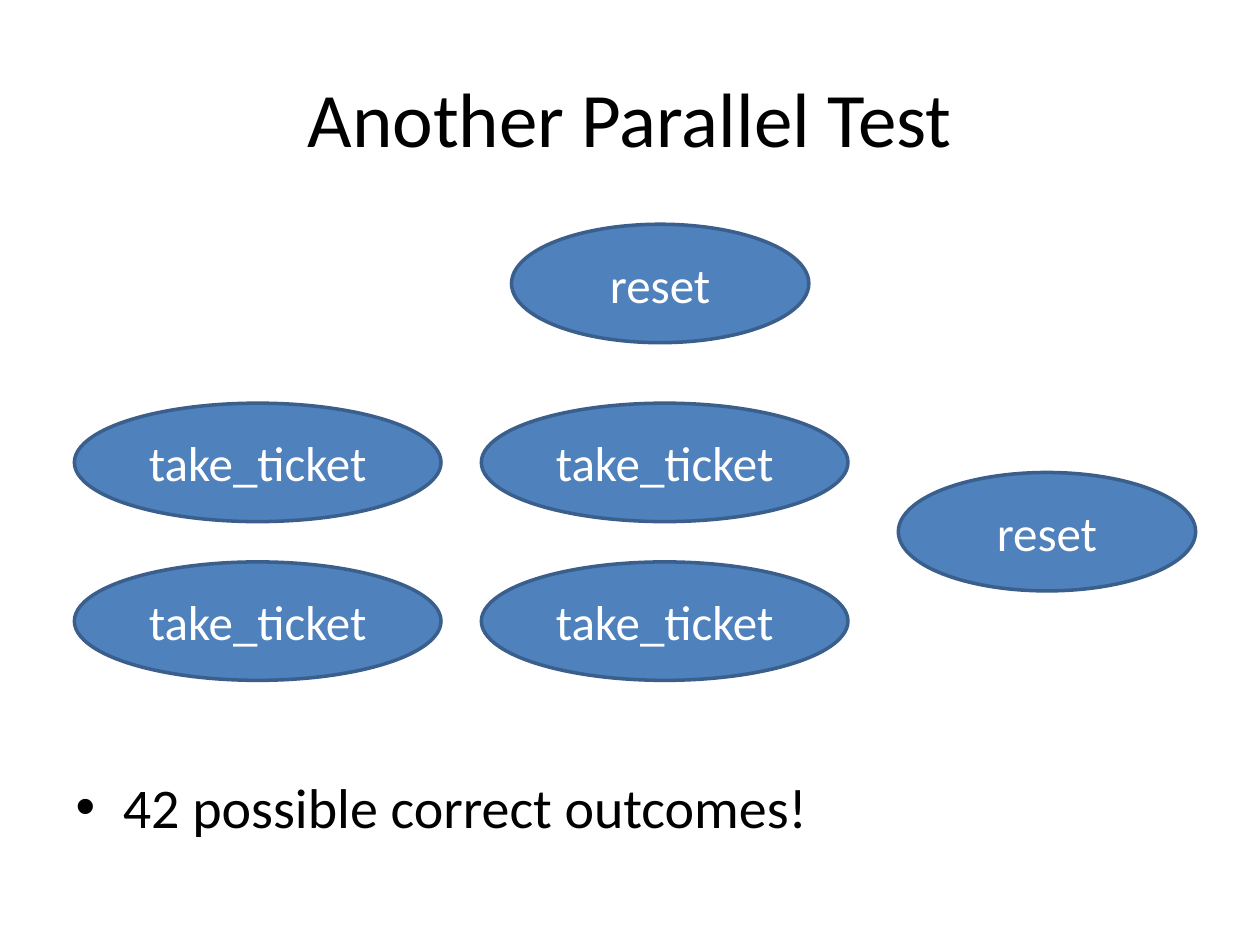
from pptx import Presentation
from pptx.dml.color import RGBColor
from pptx.enum.shapes import MSO_SHAPE
from pptx.enum.text import MSO_ANCHOR, PP_ALIGN
from pptx.util import Inches, Pt

ELLIPSE = MSO_SHAPE.OVAL
MIDDLE = MSO_ANCHOR.MIDDLE
CENTER = PP_ALIGN.CENTER

TITLE_AND_CONTENT = 1
FONT = "Calibri"
BLACK, WHITE = "000000", "FFFFFF"
BLUE, DARK_BLUE = "4F81BD", "3A5F8C"

CALL_HEIGHT = 0.94
RESET_WIDTH, TICKET_WIDTH = 2.36, 2.91
TICKET_LEFT, TICKET_TOP = 0.59, 3.2
COLUMN_STEP, ROW_STEP = 3.23, 1.26


def color(hex_code):
    return RGBColor.from_string(hex_code)


def style(paragraph, size, hex_code):
    paragraph.font.name = FONT
    paragraph.font.size = Pt(size)
    paragraph.font.color.rgb = color(hex_code)


def fill_placeholder(placeholder, text, box, size):
    placeholder.left, placeholder.top, placeholder.width, placeholder.height = map(Inches, box)
    placeholder.text_frame.text = text
    style(placeholder.text_frame.paragraphs[0], size, BLACK)


def add_call(slide, name, left, top, width):
    """Add an ellipse that stands for one function call."""
    call = slide.shapes.add_shape(
        ELLIPSE, Inches(left), Inches(top), Inches(width), Inches(CALL_HEIGHT))
    call.shadow.inherit = False
    call.fill.solid()
    call.fill.fore_color.rgb = color(BLUE)
    call.line.color.rgb = color(DARK_BLUE)
    call.line.width = Pt(2)
    frame = call.text_frame
    frame.text = name
    frame.vertical_anchor = MIDDLE
    frame.paragraphs[0].alignment = CENTER
    style(frame.paragraphs[0], 28, WHITE)


def main():
    deck = Presentation()
    deck.slide_width, deck.slide_height = Inches(10), Inches(7.5)
    slide = deck.slides.add_slide(deck.slide_layouts[TITLE_AND_CONTENT])

    title, outcome = slide.placeholders
    fill_placeholder(title, "Another Parallel Test", (0.5, 0.3, 9, 1.25), 44)
    fill_placeholder(outcome, "42 possible correct outcomes!", (0.5, 6.08, 9, 0.9), 32)

    add_call(slide, "reset", 4.06, 1.78, RESET_WIDTH)
    for column in range(2):
        for row in range(2):
            add_call(slide, "take_ticket", TICKET_LEFT + column * COLUMN_STEP,
                     TICKET_TOP + row * ROW_STEP, TICKET_WIDTH)
    add_call(slide, "reset", 7.13, 3.75, RESET_WIDTH)

    deck.save("out.pptx")


if __name__ == "__main__":
    main()
